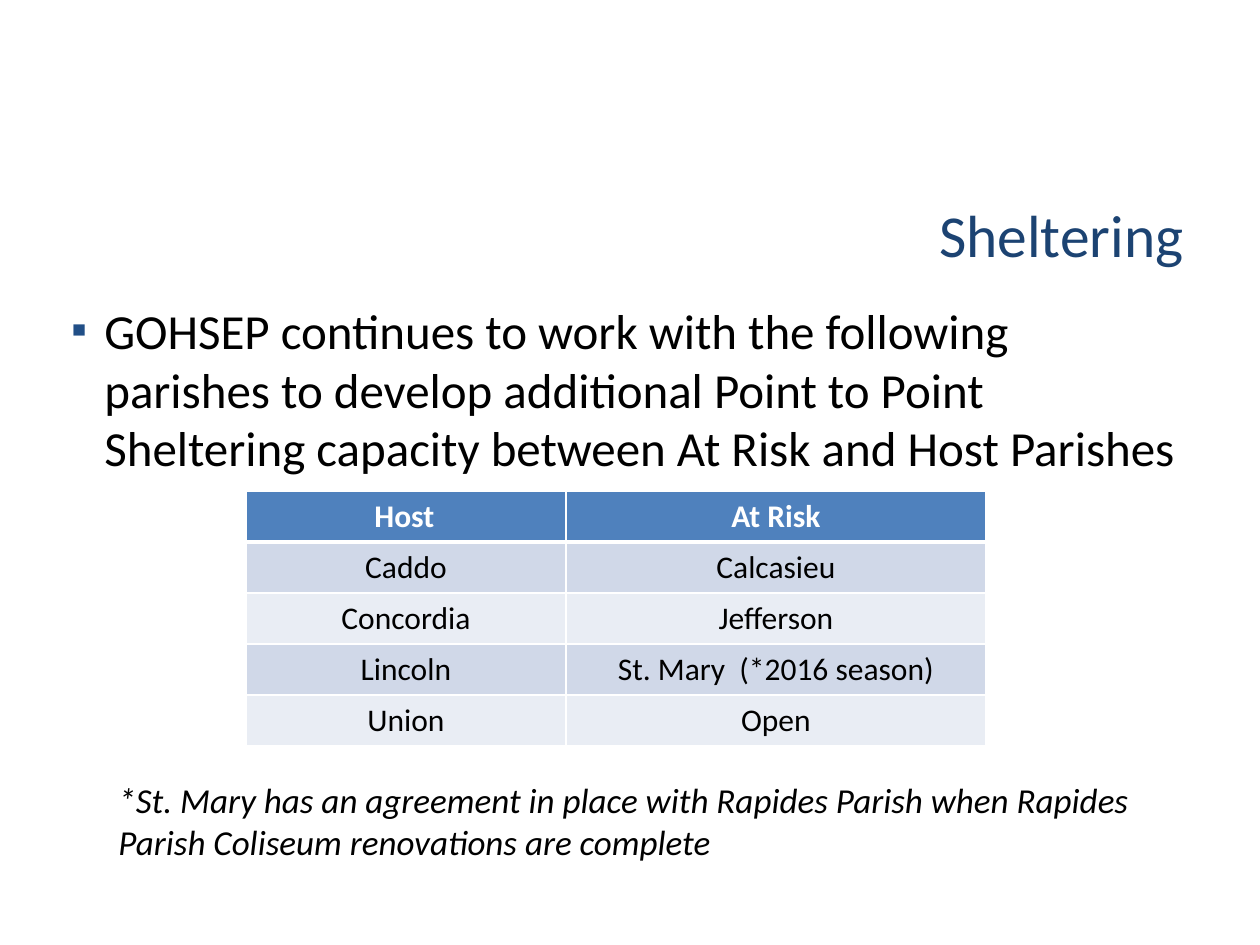
from lxml import etree
from pptx import Presentation
from pptx.dml.color import RGBColor
from pptx.enum.text import MSO_ANCHOR as Anchor, PP_ALIGN as Align
from pptx.oxml.ns import qn
from pptx.util import Pt

PX = 914400 / 126
NAVY = RGBColor(0x1C, 0x43, 0x72)
BLACK = RGBColor(0, 0, 0)
WHITE = RGBColor(255, 255, 255)
BLUE = RGBColor(0x4F, 0x81, 0xBD)
BANDS = [RGBColor(0xE9, 0xED, 0xF4), RGBColor(0xD0, 0xD8, 0xE8)]


def px(*sizes):
    return [round(size * PX) for size in sizes]


def style(par, size, color, bold=False, italic=False):
    for run in par.runs:
        font = run.font
        font.name, font.size = "Calibri", Pt(size)
        font.bold, font.italic = bold, italic
        font.color.rgb = color


deck = Presentation()
deck.slide_width, deck.slide_height = px(1260, 945)
slide = deck.slides.add_slide(deck.slide_layouts[5])

# Title
title = slide.shapes.title
title.left, title.top, title.width, title.height = px(62, 190, 1134, 88)
frame = title.text_frame
frame.text = "Sheltering"
frame.vertical_anchor = Anchor.MIDDLE
frame.paragraphs[0].alignment = Align.RIGHT
style(frame.paragraphs[0], 34, NAVY)

# Bulleted statement
frame = slide.shapes.add_textbox(*px(59, 294, 1134, 190)).text_frame
frame.word_wrap = True
par = frame.paragraphs[0]
par.text = ("GOHSEP continues to work with the following parishes to develop "
            "additional Point to Point Sheltering capacity between At Risk "
            "and Host Parishes")
props = par._p.get_or_add_pPr()
indent = px(33)[0]
props.set("marL", str(indent))
props.set("indent", str(-indent))
color = etree.SubElement(props, qn("a:buClr"))
etree.SubElement(color, qn("a:srgbClr"), val="214F87")
etree.SubElement(props, qn("a:buSzPct"), val="90000")
etree.SubElement(props, qn("a:buFont"), typeface="Calibri")
etree.SubElement(props, qn("a:buChar"), char="▪")
style(par, 28, BLACK)

# Parish table
rows = [
    ("Host\t", "At Risk"),
    ("Caddo", "Calcasieu"),
    ("Concordia", "Jefferson"),
    ("Lincoln", "St. Mary  (*2016 season)"),
    ("Union", "Open"),
]
table = slide.shapes.add_table(5, 2, *px(246, 491, 740, 255)).table
for col, width in zip(table.columns, px(320, 420)):
    col.width = width
for r, row in enumerate(rows):
    table.rows[r].height = px(51)[0]
    for c, text in enumerate(row):
        cell = table.cell(r, c)
        cell.text = text
        par = cell.text_frame.paragraphs[0]
        par.alignment = Align.CENTER
        style(par, 18, BLACK if r else WHITE, bold=r == 0)
        # Borders come before the fill in the cell properties
        props = cell._tc.get_or_add_tcPr()
        for side in "LRTB":
            thick = (r, side) in [(0, "B"), (1, "T")]
            line = etree.SubElement(props, qn(f"a:ln{side}"),
                                    w=str(Pt(3 if thick else 1)))
            fill = etree.SubElement(line, qn("a:solidFill"))
            etree.SubElement(fill, qn("a:srgbClr"), val=str(WHITE))
        cell.fill.solid()
        cell.fill.fore_color.rgb = BANDS[r % 2] if r else BLUE

# Footnote
frame = slide.shapes.add_textbox(*px(106, 772, 1087, 100)).text_frame
frame.word_wrap = True
par = frame.paragraphs[0]
par.text = ("*St. Mary has an agreement in place with Rapides Parish when "
            "Rapides Parish Coliseum renovations are complete")
style(par, 20, BLACK, italic=True)

deck.save("out.pptx")
